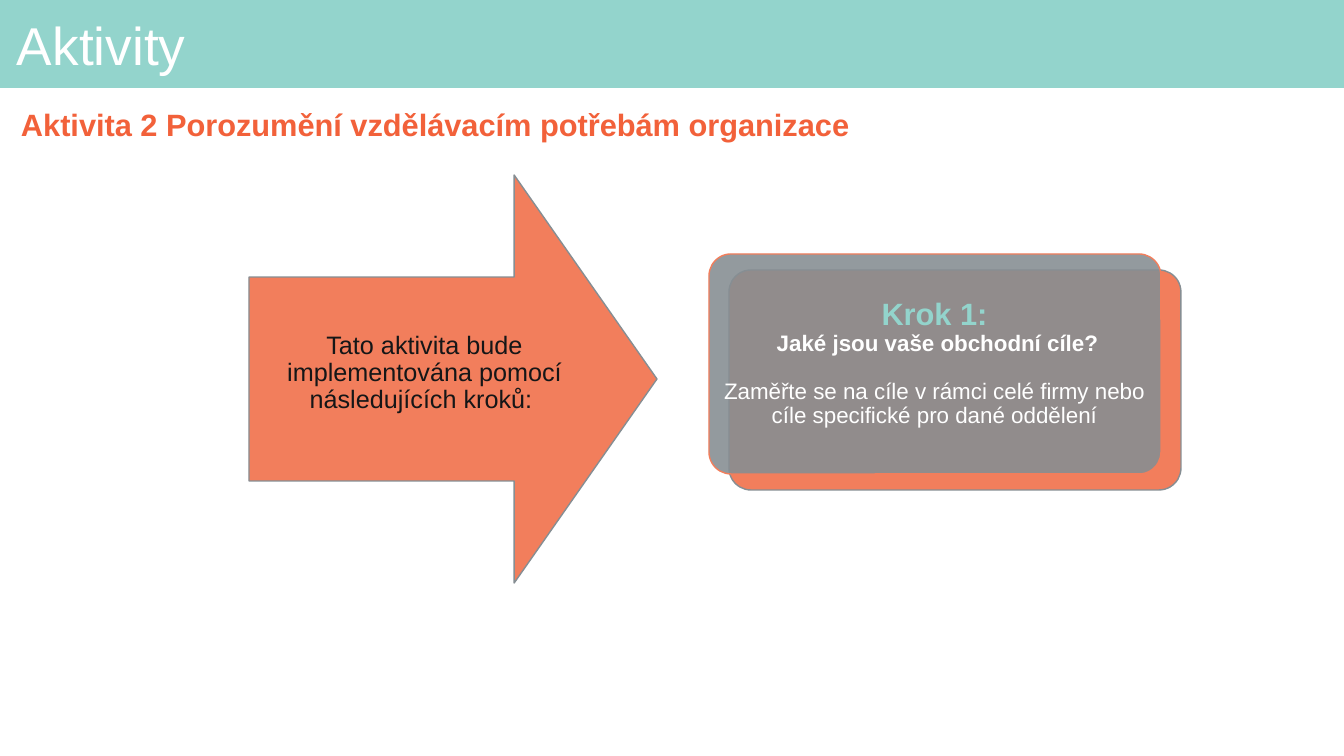
from lxml import etree
from pptx import Presentation
from pptx.dml.color import RGBColor
from pptx.enum.shapes import MSO_SHAPE
from pptx.enum.text import MSO_ANCHOR, PP_ALIGN
from pptx.oxml.ns import qn
from pptx.util import Pt

PX = 914400 / 100.8
TEAL, ORANGE, GREY, WHITE = "93D4CC", "F27E5C", "868E93", "FFFFFF"


def rgb(value):
    return RGBColor.from_string(value)


def px(*lengths):
    return [round(n * PX) for n in lengths]


prs = Presentation()
prs.slide_width, prs.slide_height = px(1344, 756)
s = prs.slides.add_slide(prs.slide_layouts[6])

# Header band, arrow and the two layers of the step card
shapes = [
    (MSO_SHAPE.RECTANGLE, (0, 0, 1344, 88), [], TEAL, None),
    (MSO_SHAPE.RIGHT_ARROW, (249, 175, 408, 408), [0.5, 0.35], ORANGE, GREY),
    (MSO_SHAPE.ROUNDED_RECTANGLE, (729, 270, 452, 220), [0.1], ORANGE, GREY),
    (MSO_SHAPE.ROUNDED_RECTANGLE, (709, 254, 452, 220), [0.1], GREY, ORANGE),
]
for kind, box, adjustments, fill, line in shapes:
    sp = s.shapes.add_shape(kind, *px(*box))
    sp.shadow.inherit = False
    for i, value in enumerate(adjustments):
        sp.adjustments[i] = value
    sp.fill.solid()
    sp.fill.fore_color.rgb = rgb(fill)
    if line:
        sp.line.color.rgb = rgb(line)
        sp.line.width = Pt(1)
    else:
        sp.line.fill.background()

# The front card layer, drawn last, lets the back one show through
front_color = sp.fill._xPr.find(qn("a:solidFill"))[0]
etree.SubElement(front_color, qn("a:alpha"), val="89000")

# Text: box, inset, alignment, then (wording, size, colour, bold, space before)
texts = [
    ((11, 9, 1316, 79), 6, PP_ALIGN.LEFT, [("Aktivity", 38, WHITE, False, 0)]),
    ((11, 97, 1316, 60), 10, PP_ALIGN.LEFT,
     [("Aktivita 2 Porozumění vzdělávacím potřebám organizace", 22, "F2613A", True, 0)]),
    ((256, 271, 337, 205), 14, PP_ALIGN.CENTER,
     [("Tato aktivita bude implementována pomocí následujících kroků: ",
       18, "151617", False, 0)]),
    ((717, 260, 435, 207), 6, PP_ALIGN.CENTER,
     [("Krok 1:", 22, TEAL, True, 0),
      (" Jaké jsou vaše obchodní cíle?", 16, WHITE, True, 0),
      ("Zaměřte se na cíle v rámci celé firmy nebo cíle specifické pro dané oddělení",
       16, WHITE, False, 17)]),
]
for box, inset, align, paragraphs in texts:
    tf = s.shapes.add_textbox(*px(*box)).text_frame
    margin = px(inset)[0]
    frame_format = {
        "word_wrap": True, "vertical_anchor": MSO_ANCHOR.MIDDLE,
        "margin_left": margin, "margin_right": margin,
        "margin_top": margin, "margin_bottom": margin,
    }
    for name, value in frame_format.items():
        setattr(tf, name, value)
    for i, (wording, size, color, bold, before) in enumerate(paragraphs):
        p = tf.add_paragraph() if i else tf.paragraphs[0]
        p.alignment, p.line_spacing, p.space_before = align, 0.9, Pt(before)
        r = p.add_run()
        r.text = wording
        for name, value in {"name": "Arial", "size": Pt(size), "bold": bold}.items():
            setattr(r.font, name, value)
        r.font.color.rgb = rgb(color)

prs.save("out.pptx")
